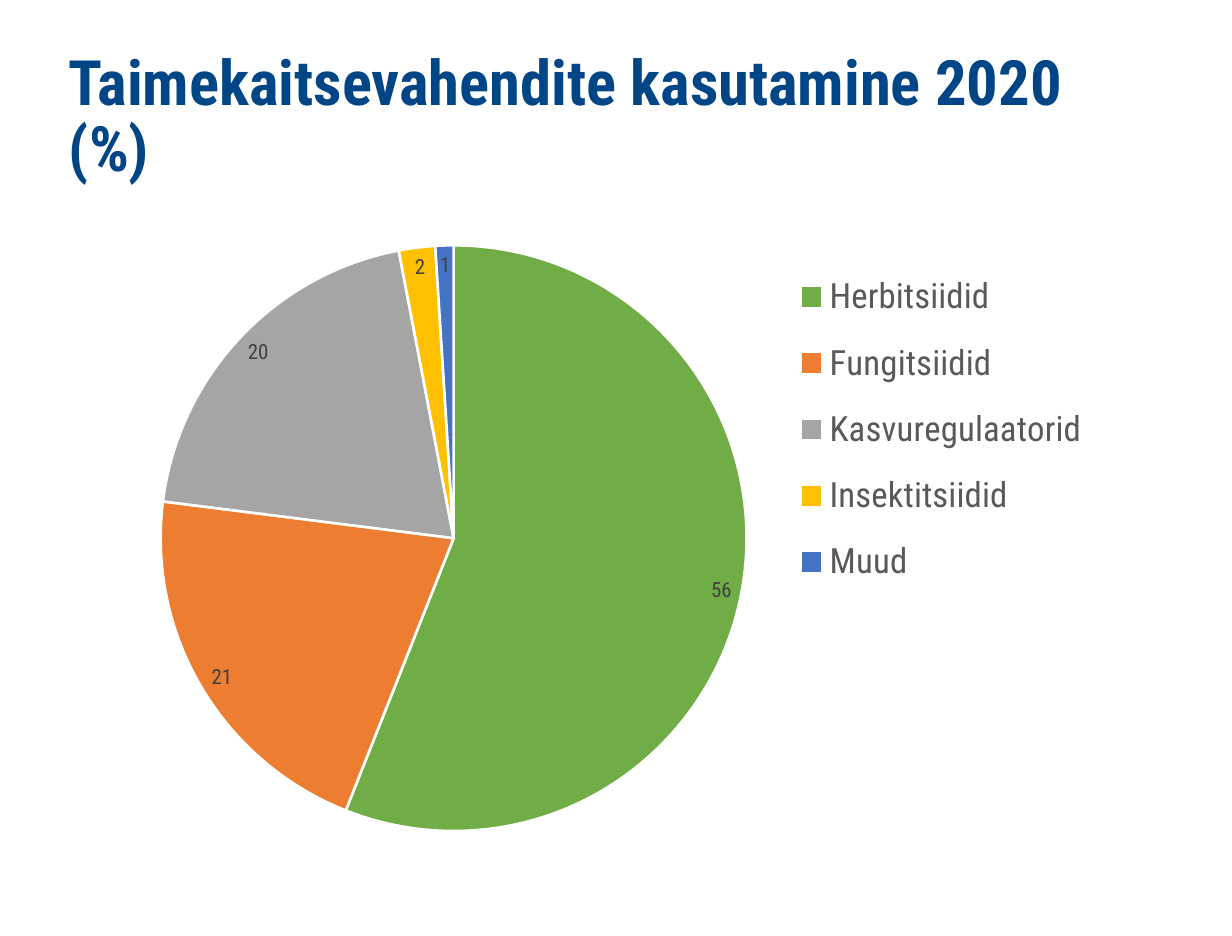
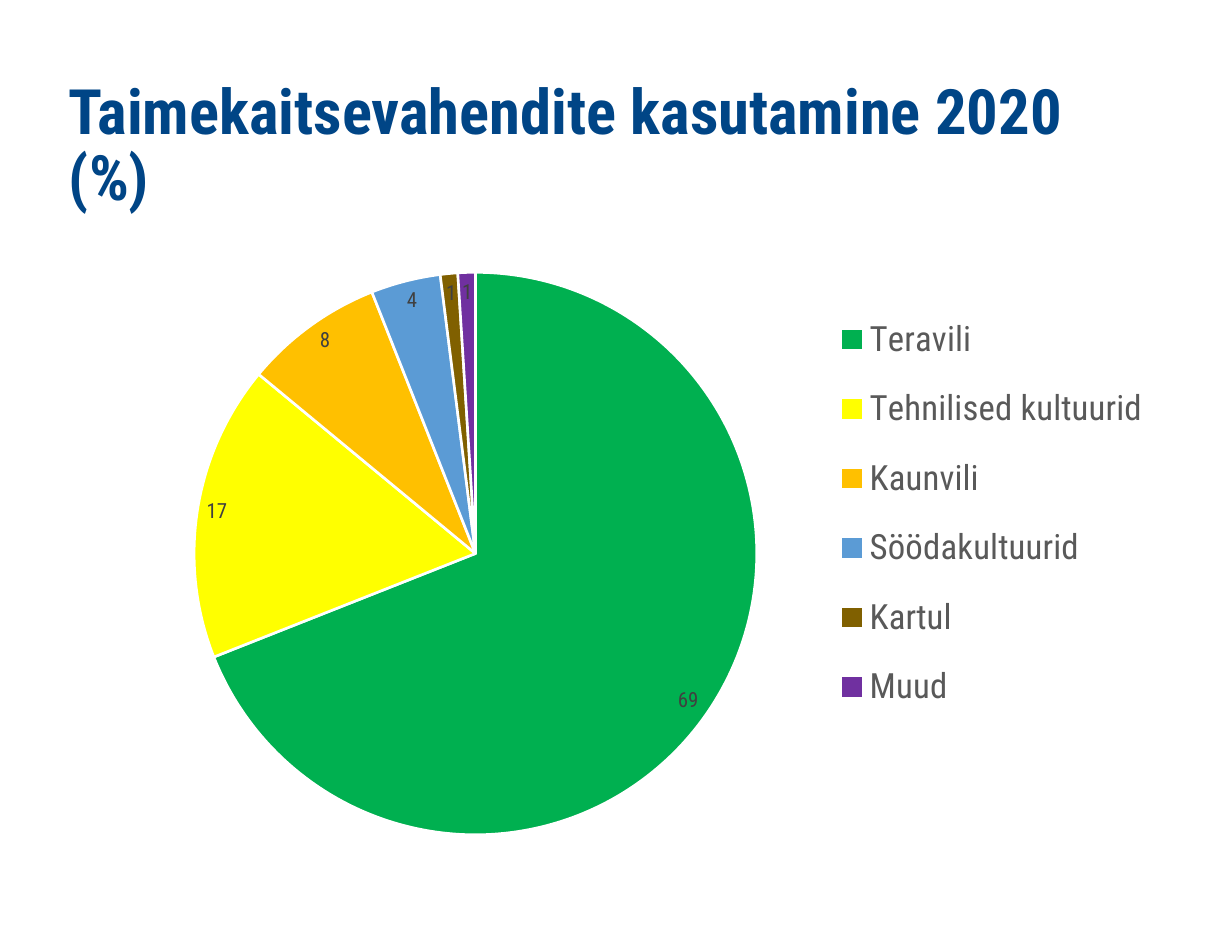
from dataclasses import dataclass

from pptx import Presentation, util as u
from pptx.chart.data import CategoryChartData
from pptx.dml.color import RGBColor
from pptx.enum import chart as ch, text
from pptx.oxml import parse_xml
from pptx.oxml.ns import nsdecls


@dataclass(frozen=True)
class Theme:
    font: str = "Roboto Condensed"
    title: str = "004586"
    legend: str = "595959"
    label: str = "404040"
    edge: str = "FFFFFF"
    title_size: int = 36
    legend_size: int = 20
    label_size: int = 12


T = Theme()
WIDTH, HEIGHT = u.Cm(25), u.Cm(19)
LEFT, TITLE_WIDTH, TITLE_HEIGHT = u.Inches(0.55), u.Inches(8.66), u.Inches(1.18)
TITLE = "Taimekaitsevahendite kasutamine 2020 (%)"

# Boxes are in inches; plot and legend are shares of the chart (x, y, w, h).
SLIDES = [
    dict(title_top=0.36, box=(0.55, 1.54, 8.66, 5.26),
         plot=(0.08, 0.08, 0.55, 0.89), legend=(0.66, 0.09, 0.29, 0.54),
         side=ch.XL_LEGEND_POSITION.RIGHT,
         slices=[("Herbitsiidid", 56, "70AD47"), ("Fungitsiidid", 21, "ED7D31"),
                 ("Kasvuregulaatorid", 20, "A5A5A5"), ("Insektitsiidid", 2, "FFC000"),
                 ("Muud", 1, "4472C4")]),
    dict(title_top=0.59, box=(0.55, 1.93, 8.78, 4.94),
         plot=(0.1, 0.05, 0.54, 0.91), legend=(0.69, 0.08, 0.3, 0.72),
         side=ch.XL_LEGEND_POSITION.BOTTOM,
         slices=[("Teravili", 69, "00B050"), ("Tehnilised kultuurid", 17, "FFFF00"),
                 ("Kaunvili", 8, "FFC000"), ("Söödakultuurid", 4, "5B9BD5"),
                 ("Kartul", 1, "806000"), ("Muud", 1, "7030A0")]),
]


def style_font(font, size, color, bold=False):
    for name, value in dict(name=T.font, size=u.Pt(size), bold=bold).items():
        setattr(font, name, value)
    font.color.rgb = RGBColor.from_string(color)


def set_layout(parent, index, share, inner=False):
    """Place a chart part by shares of the chart's size."""
    for old in parent.xpath("./c:layout"):
        parent.remove(old)
    target = '<c:layoutTarget val="inner"/>' if inner else ""
    modes = "".join(f'<c:{a}Mode val="edge"/>' for a in "xy")
    sizes = "".join(f'<c:{a} val="{v}"/>' for a, v in zip("xywh", share))
    parent.insert(index, parse_xml(
        f'<c:layout {nsdecls("c")}><c:manualLayout>{target}{modes}{sizes}'
        "</c:manualLayout></c:layout>"))


prs = Presentation()
prs.slide_width, prs.slide_height = WIDTH, HEIGHT

for page in SLIDES:
    s = prs.slides.add_slide(prs.slide_layouts[6])

    tf = s.shapes.add_textbox(LEFT, u.Inches(page["title_top"]),
                              TITLE_WIDTH, TITLE_HEIGHT).text_frame
    frame = dict(word_wrap=True, vertical_anchor=text.MSO_ANCHOR.TOP,
                 margin_left=0, margin_top=u.Inches(0.06),
                 margin_right=0, margin_bottom=0)
    for name, value in frame.items():
        setattr(tf, name, value)
    p = tf.paragraphs[0]
    p.line_spacing = 0.88
    r = p.add_run()
    r.text = TITLE
    style_font(r.font, T.title_size, T.title, bold=True)

    names, values, colors = zip(*page["slices"])
    data = CategoryChartData()
    data.categories = names
    data.add_series("Series 1", values)
    chart = s.shapes.add_chart(ch.XL_CHART_TYPE.PIE,
                               *map(u.Inches, page["box"]), data).chart
    chart.has_title = False
    chart.has_legend = True
    chart.legend.position = page["side"]
    chart.legend.include_in_layout = False
    style_font(chart.legend.font, T.legend_size, T.legend)

    plot = chart.plots[0]
    plot.vary_by_categories = True
    plot.has_data_labels = True
    labels = plot.data_labels
    labels.show_value = True
    labels.show_percentage = False
    labels.position = ch.XL_LABEL_POSITION.BEST_FIT
    style_font(labels.font, T.label_size, T.label)

    for i, color in enumerate(colors):
        fmt = plot.series[0].points[i].format
        fmt.fill.solid()
        fmt.fill.fore_color.rgb = RGBColor.from_string(color)
        fmt.line.color.rgb = RGBColor.from_string(T.edge)
        fmt.line.width = u.Pt(1.5)

    root = chart._chartSpace
    set_layout(root.xpath(".//c:plotArea")[0], 0, page["plot"], inner=True)
    set_layout(root.xpath(".//c:legend")[0], 1, page["legend"])

prs.save("out.pptx")
